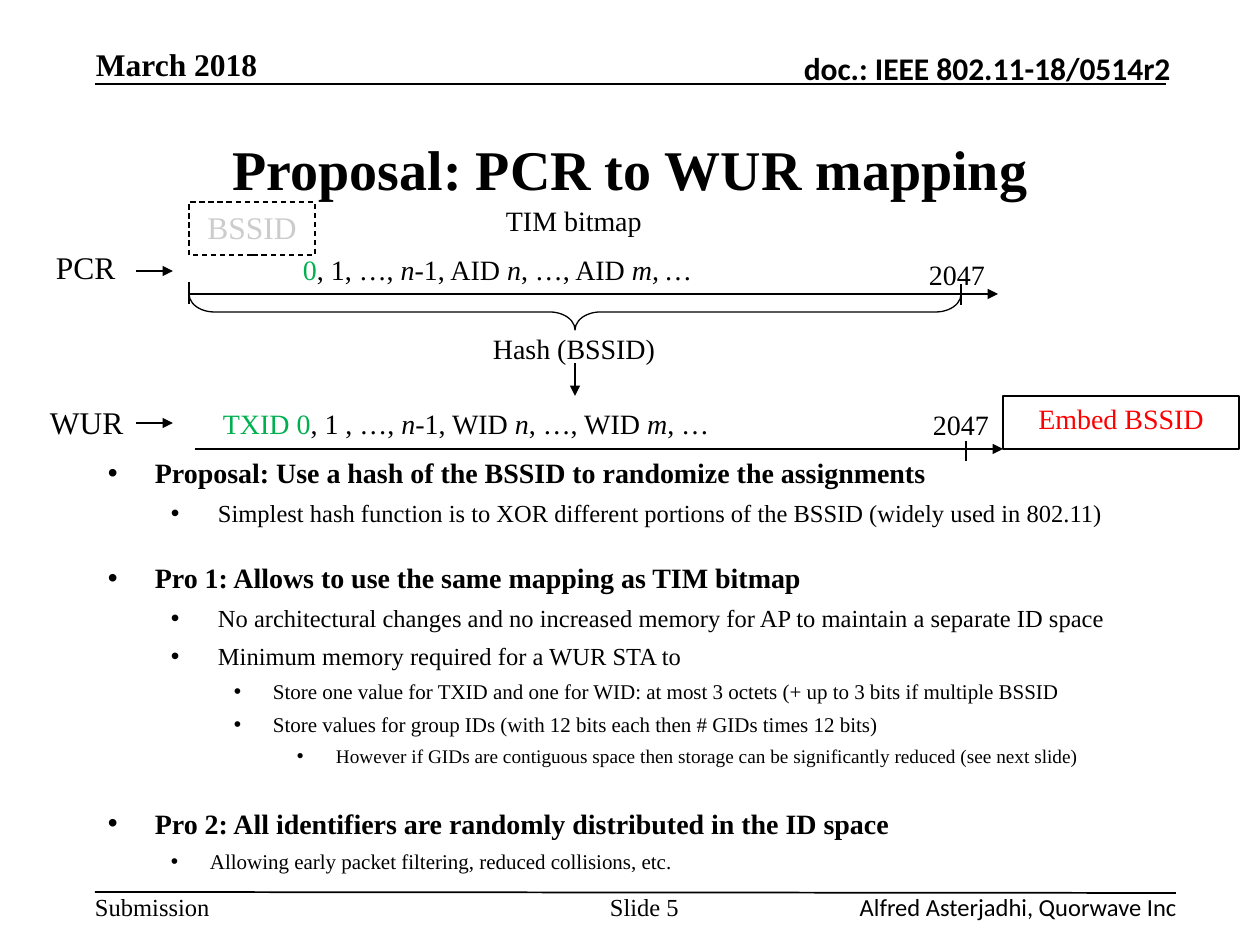
from lxml.etree import SubElement
from pptx import Presentation
from pptx.dml.color import RGBColor
from pptx.enum.dml import MSO_LINE_DASH_STYLE as Dash
from pptx.enum.shapes import MSO_CONNECTOR as Connector, MSO_SHAPE as Shape
from pptx.enum.text import MSO_ANCHOR as Anchor, MSO_AUTO_SIZE as AutoSize, PP_ALIGN as Align
from pptx.oxml.ns import qn
from pptx.util import Pt

EMU_PER_PX = 914400 / 126
COLORS = {
    "ink": "000000",
    "faded": "CCCCCC",
    "group": "00B050",
    "embed": "FF0000",
}
SERIF = "Times New Roman"
SANS = "Calibri"
INSETS = ("margin_left", "margin_top", "margin_right", "margin_bottom")

HEADER_TEXTS = [
    ("March 2018", (96, 45, 258, 38), dict(size=18, bold=True, anchor=Anchor.BOTTOM)),
    ("doc.: IEEE 802.11-18/0514r2", (689, 49, 482, 38),
     dict(size=18, bold=True, font=SANS, align=Align.RIGHT, anchor=Anchor.BOTTOM)),
]
FOOTER_TEXTS = [
    ("Submission", (95, 892, 116, 30), dict(size=14, wrap=False)),
    ("Slide 5", (599, 892, 91, 50), dict(size=14, align=Align.CENTER)),
    ("Alfred Asterjadhi, Quorwave Inc", (738, 892, 439, 25),
     dict(size=14, font=SANS, align=Align.RIGHT)),
]
PCR_IDS = [("0", "group", False), (", 1, …, ", "ink", False), ("n", "ink", True),
           ("-1, AID ", "ink", False), ("n", "ink", True),
           (", …, AID ", "ink", False), ("m, …", "ink", True)]
WUR_IDS = [("TXID 0", "group", False), (", 1 , …, ", "ink", False), ("n", "ink", True),
           ("-1, WID ", "ink", False), ("n", "ink", True),
           (", …, WID ", "ink", False), ("m", "ink", True), (", …", "ink", False)]
DIAGRAM_LABELS = [
    ("TIM bitmap", (493, 198, 164, 47)),
    (PCR_IDS, (290, 247, 415, 47)),
    ("2047", (916, 252, 82, 47)),
    ("Hash (BSSID)", (480, 325, 189, 47)),
    (WUR_IDS, (210, 401, 532, 47)),
    ("2047", (920, 402, 82, 47)),
]
ROW_LABELS = [("PCR", (43, 242, 86, 50)), ("WUR", (37, 397, 115, 50))]
RULES = [(95, 84, 1166, 84), (95, 892, 1176, 893)]
TICKS = [(189, 282, 189, 304), (961, 284, 961, 305), (966, 441, 966, 461)]
ARROWS = [
    (189, 294, 998, 294),
    (195, 449, 1003, 449),
    (136, 271, 173, 271),
    (136, 423, 173, 423),
    (575, 363, 575, 396),
]
BULLETS = [
    ("Proposal: Use a hash of the BSSID to randomize the assignments", 0, 16, 6),
    ("Simplest hash function is to XOR different portions of the BSSID (widely used in 802.11)", 1, 14, 5),
    ("Pro 1: Allows to use the same mapping as TIM bitmap", 0, 16, 19),
    ("No architectural changes and no increased memory for AP to maintain a separate ID space", 1, 14, 5),
    ("Minimum memory required for a WUR STA to", 1, 14, 5),
    ("Store one value for TXID and one for WID: at most 3 octets (+ up to 3 bits if multiple BSSID", 2, 12, 4.5),
    ("Store values for group IDs (with 12 bits each then # GIDs times 12 bits)", 2, 12, 4.5),
    ("However if GIDs are contiguous space then storage can be significantly reduced (see next slide)", 3, 11, 4),
    ("Pro 2: All identifiers are randomly distributed in the ID space", 0, 16, 22.5),
    ("Allowing early packet filtering, reduced collisions, etc.", 1, 12, 5),
]
BULLET_LEFT = 63
WIDE_HANG, NARROW_HANG = 47, 39


def px(length):
    return round(length * EMU_PER_PX)


def rgb(name):
    return RGBColor.from_string(COLORS[name])


def set_all(target, values):
    for name, value in values.items():
        setattr(target, name, value)


def add_span(para, text, size, font=SERIF, color="ink", bold=False, italic=False):
    span = para.add_run()
    span.text = text
    set_all(span.font, dict(name=font, size=Pt(size), bold=bold, italic=italic))
    span.font.color.rgb = rgb(color)


def set_frame(frame, inset, anchor=Anchor.TOP, wrap=True):
    set_all(frame, dict(word_wrap=wrap, vertical_anchor=anchor, auto_size=AutoSize.NONE))
    if not wrap:
        frame.auto_size = AutoSize.SHAPE_TO_FIT_TEXT
    horizontal, vertical = inset
    set_all(frame, dict(zip(INSETS, map(px, (horizontal, vertical) * 2))))


def add_text(page, content, place, size, inset=(0, 0), align=Align.LEFT,
             anchor=Anchor.TOP, wrap=True, **style):
    box = page.shapes.add_textbox(*map(px, place))
    set_frame(box.text_frame, inset, anchor, wrap)
    para = box.text_frame.paragraphs[0]
    para.alignment = align
    if isinstance(content, str):
        add_span(para, content, size, **style)
    else:
        for text, color, italic in content:
            add_span(para, text, size, color=color, italic=italic)


def add_line(page, ends, width=0.75, arrow=False):
    line = page.shapes.add_connector(Connector.STRAIGHT, *map(px, ends))
    line.line.color.rgb = rgb("ink")
    line.line.width = Pt(width)
    if arrow:
        SubElement(line.line._get_or_add_ln(), qn("a:tailEnd"), type="triangle")
    SubElement(line._element.spPr, qn("a:effectLst"))


def add_outline(page, kind, place):
    shape = page.shapes.add_shape(kind, *map(px, place))
    shape.shadow.inherit = False
    shape.fill.background()
    shape.line.color.rgb = rgb("ink")
    shape.line.width = Pt(0.75)
    return shape


def add_tag(page, text, place, size, color, dash=None):
    tag = add_outline(page, Shape.RECTANGLE, place)
    tag.line.dash_style = dash
    set_frame(tag.text_frame, (13, 6))
    para = tag.text_frame.paragraphs[0]
    para.alignment = Align.CENTER
    add_span(para, text, size, color=color)


def add_brace(page, place):
    brace = add_outline(page, Shape.RIGHT_BRACE, place)
    brace.rotation = 90
    brace.adjustments[0] = 0.7


def set_bullet(para, left, hang):
    props = para._p.get_or_add_pPr()
    props.set("marL", str(px(left + hang)))
    props.set("indent", str(px(-hang)))
    color = SubElement(props, qn("a:buClr"))
    SubElement(color, qn("a:srgbClr"), val=COLORS["ink"])
    SubElement(props, qn("a:buFont"), typeface="Arial")
    SubElement(props, qn("a:buChar"), char="•")


def add_bullets(page, items, place):
    box = page.shapes.add_textbox(*map(px, place))
    frame = box.text_frame
    set_frame(frame, (13, 6))
    for index, (text, level, size, before) in enumerate(items):
        para = frame.add_paragraph() if index else frame.paragraphs[0]
        set_all(para, dict(level=level, space_before=Pt(before), alignment=Align.LEFT))
        hang = WIDE_HANG if size >= 14 else NARROW_HANG
        set_bullet(para, level * BULLET_LEFT, hang)
        add_span(para, text, size, bold=level == 0)


def main():
    deck = Presentation()
    set_all(deck, dict(slide_width=px(1260), slide_height=px(945)))
    page = deck.slides.add_slide(deck.slide_layouts[6])

    for ends in RULES:
        add_line(page, ends, width=1)
    for text, place, style in HEADER_TEXTS + FOOTER_TEXTS:
        add_text(page, text, place, **style)
    add_text(page, "Proposal: PCR to WUR mapping", (95, 95, 1071, 146), 32,
             inset=(13, 6), align=Align.CENTER, anchor=Anchor.MIDDLE, bold=True)
    add_bullets(page, BULLETS, (95, 450, 1071, 441))

    add_tag(page, "BSSID", (189, 202, 126, 53), 18, "faded", Dash.DASH)
    add_tag(page, "Embed BSSID", (1003, 396, 236, 53), 16, "embed")
    for content, place in DIAGRAM_LABELS:
        add_text(page, content, place, 16, inset=(13, 6), wrap=False)
    for text, place in ROW_LABELS:
        add_text(page, text, place, 18, inset=(13, 6))
    for ends in TICKS:
        add_line(page, ends)
    for ends in ARROWS:
        add_line(page, ends, arrow=True)
    add_brace(page, (557, -74, 36, 772))

    deck.save("out.pptx")


if __name__ == "__main__":
    main()
